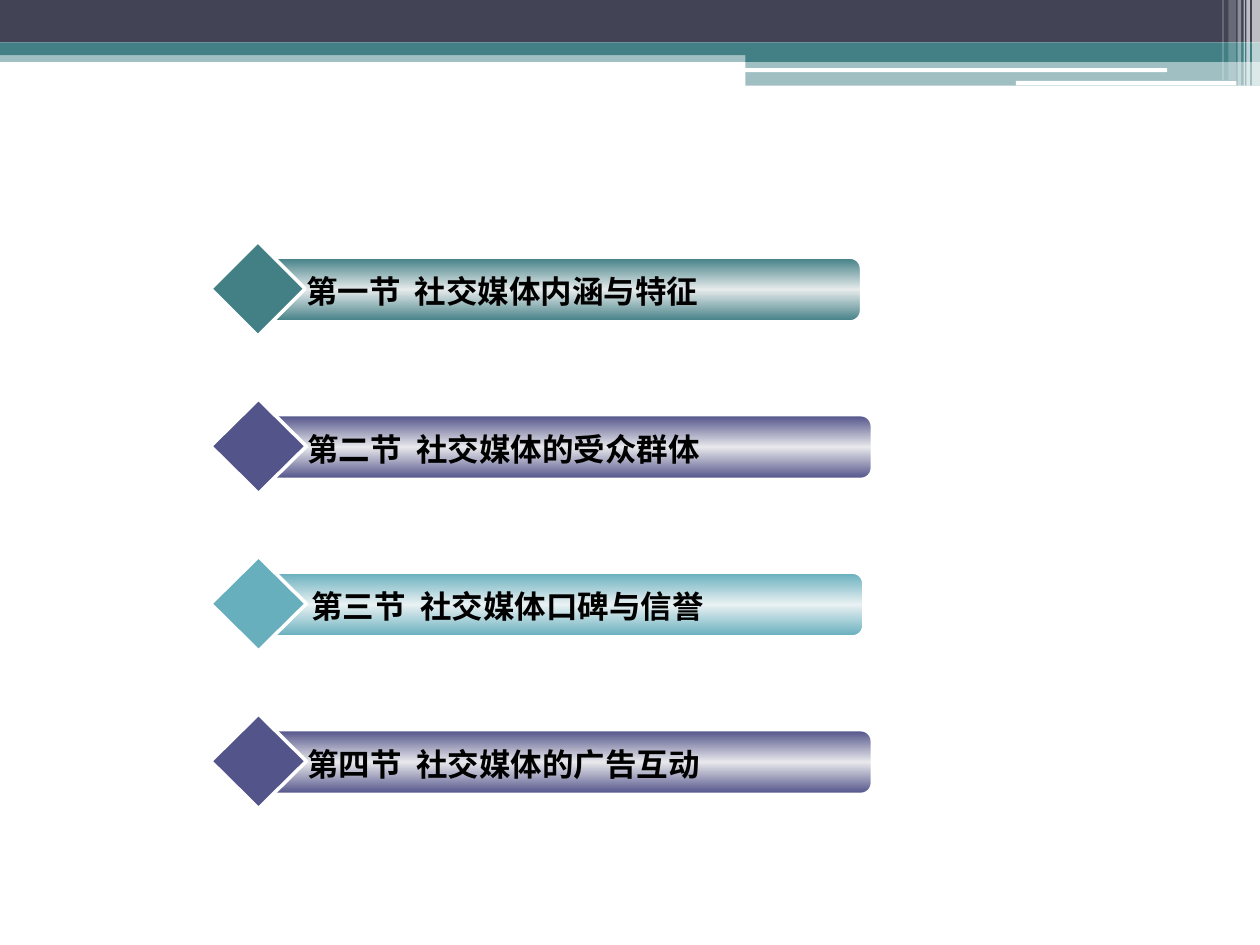
from copy import deepcopy
from pptx import Presentation
from pptx.dml.color import RGBColor
from pptx.enum.shapes import MSO_SHAPE as Shape
from pptx.enum.text import MSO_AUTO_SIZE as AutoSize
from pptx.oxml.ns import qn
from pptx.util import Pt
from lxml.etree import SubElement


def add_shape(parent, kind, area, color, opacity=100, edge=0, middle=None):
    """Add a filled shape; edge is the white outline width, middle a mid-gradient colour."""
    shape = parent.shapes.add_shape(kind, *[Pt(length) for length in area])
    shape.shadow.inherit = False
    fill = shape.fill
    if middle:
        fill.gradient()
        fill.gradient_angle = 90
        first = shape.element.spPr.find(".//" + qn("a:gs"))
        first.addnext(deepcopy(first))
        for stop, place, tone in zip(fill.gradient_stops, (0, 0.5, 1), (color, middle, color)):
            stop.position = place
            stop.color.rgb = RGBColor.from_string(tone)
    else:
        fill.solid()
        fill.fore_color.rgb = RGBColor.from_string(color)
        if opacity < 100:
            tone = shape.element.spPr.find(".//" + qn("a:srgbClr"))
            SubElement(tone, qn("a:alpha"), val=str(opacity * 1000))
    if edge:
        shape.line.width = Pt(edge)
        shape.line.color.rgb = RGBColor.from_string("FFFFFF")
    else:
        shape.line.fill.background()
    if kind == Shape.ROUNDED_RECTANGLE:
        shape.adjustments[0] = 0.167
    return shape


def add_text(parent, text, area, size=18, color="000000", bold=True, font="Arial"):
    box = parent.shapes.add_textbox(*[Pt(length) for length in area])
    frame = box.text_frame
    frame.word_wrap = True
    frame.auto_size = AutoSize.SHAPE_TO_FIT_TEXT
    span = frame.paragraphs[0].add_run()
    span.text = text
    span.font.name = font
    span.font.size = Pt(size)
    span.font.bold = bold
    span.font.color.rgb = RGBColor.from_string(color)


deck = Presentation()
deck.slide_width, deck.slide_height = Pt(720), Pt(540)
page = deck.slides.add_slide(deck.slide_layouts[6])

# Header bands: area, colour, opacity
teal, white = "438086", "FFFFFF"
bands = [
    ((0, 28.8, 720, 6.6), teal, 50),
    ((0, 0, 720, 24.3), "424456", 100),
    ((0, 24.3, 720, 7.2), teal, 100),
    ((426, 28.4, 294, 7), teal, 100),
    ((426, 34.7, 294, 14.2), teal, 50),
]
for area, color, opacity in bands:
    add_shape(page, Shape.RECTANGLE, area, color, opacity)

for area in [(425.5, 39, 241.5, 2.2), (580.5, 46.2, 126, 2.6)]:
    add_shape(page, Shape.ROUNDED_RECTANGLE, area, white)

# Translucent vertical stripes: left, width, height, opacity
stripes = [
    (715.5, 4.5, 49, 65),
    (712.2, 2, 49, 65),
    (710.7, 0.7, 49, 60),
    (707.2, 2, 49, 40),
    (702, 4.3, 46, 20),
    (698.5, 0.7, 46, 30),
]
for left, width, height, opacity in stripes:
    add_shape(page, Shape.RECTANGLE, (left, 0, width, height), white, opacity)

# Sections: text, colour, mid colour, bar left, bar width, diamond width, text left
sections = [
    ("第一节  社交媒体内涵与特征", teal, "E7EBEC", 149.8, 342, 54, 167.8),
    ("第二节  社交媒体的受众群体", "53548A", "E8E8EC", 150.2, 347.8, 54.7, 168.5),
    ("第三节  社交媒体口碑与信誉", "67AFBD", "E9F1F3", 145.4, 347.8, 54.7, 170.8),
    ("第四节  社交媒体的广告互动", "53548A", "E8E8EC", 150.2, 347.8, 54.7, 168.5),
]
for row, (text, color, middle, bar_left, bar_width, diamond_width, text_left) in enumerate(sections):
    top = 138 + 90 * row
    group = page.shapes.add_group_shape()
    add_shape(group, Shape.ROUNDED_RECTANGLE, (bar_left, top + 9.5, bar_width, 36),
              color, edge=1, middle=middle)
    add_shape(group, Shape.DIAMOND, (120.4, top, diamond_width, 54), color, edge=2)
    add_text(group, text, (text_left, top + 14, 272, 28.8))

deck.save("out.pptx")
